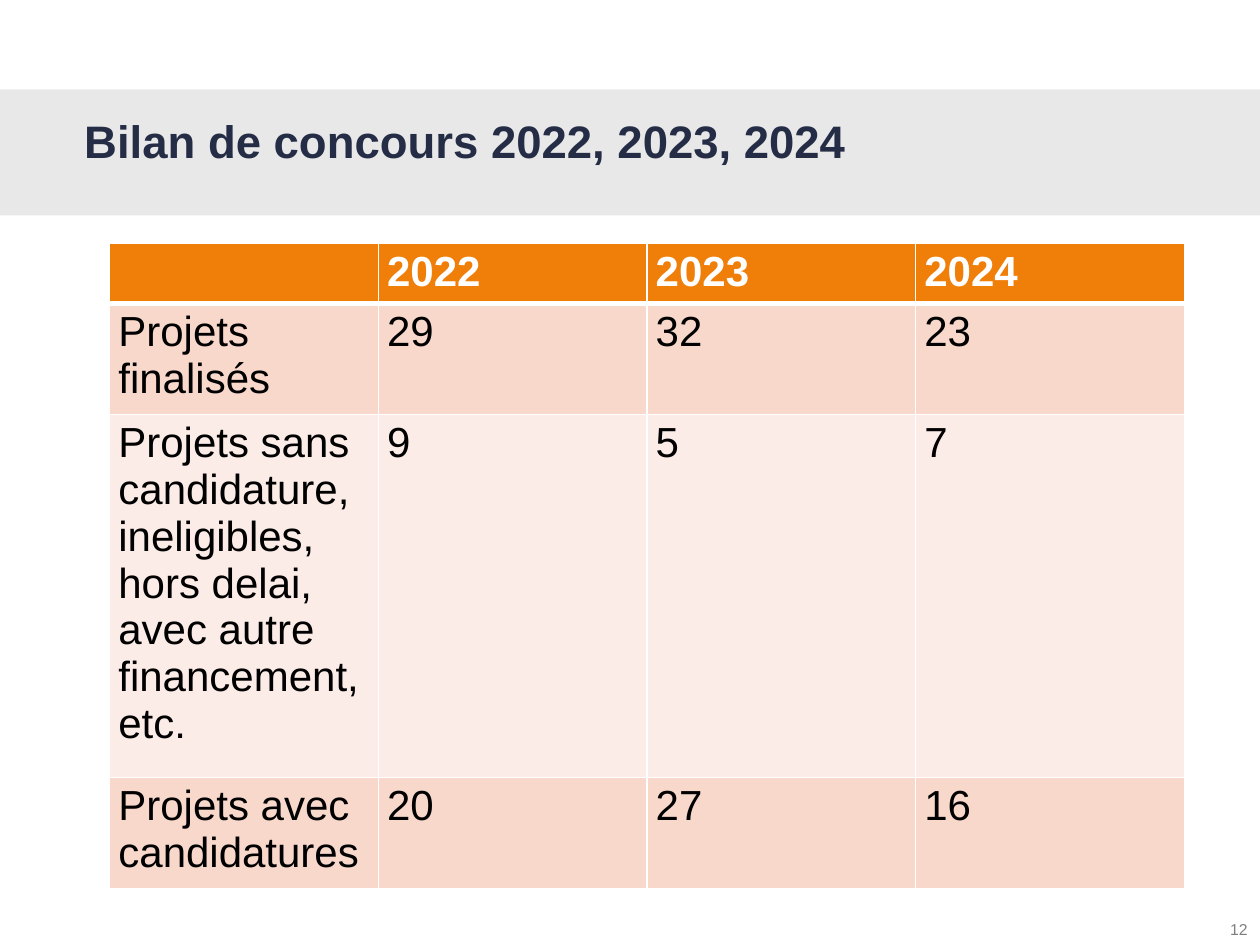
import pptx
import pptx.dml.color
import pptx.enum.shapes
import pptx.enum.text
import pptx.oxml
import pptx.oxml.ns
import pptx.util

RGBColor = pptx.dml.color.RGBColor
NAVY = RGBColor(0x24, 0x2D, 0x45)
GREY = RGBColor(0x7F, 0x7F, 0x7F)
BAND_GREY = RGBColor(0xD9, 0xD9, 0xD9)
ORANGE = RGBColor(0xF0, 0x7F, 0x09)
PEACH = RGBColor(0xF9, 0xD8, 0xCC)
PALE_PEACH = RGBColor(0xFC, 0xEC, 0xE7)
WHITE = RGBColor(0xFF, 0xFF, 0xFF)
BLACK = RGBColor(0, 0, 0)

ROWS = [
    ["", "2022", "2023", "2024"],
    ["Projets finalisés", "29", "32", "23"],
    ["Projets sans candidature, ineligibles, hors delai, avec autre financement, etc.", "9", "5", "7"],
    ["Projets avec candidatures", "20", "27", "16"],
]
ROW_HEIGHTS = [4.7, 8.2, 26.8, 8.2]


def write(frame, text, size=24, color=BLACK, bold=False, align=None):
    para = frame.paragraphs[0]
    para.alignment = align
    para.font.size = pptx.util.Pt(size)
    span = para.add_run()
    span.text = text
    span.font.name = "Arial"
    span.font.size = pptx.util.Pt(size)
    span.font.bold = bold
    span.font.color.rgb = color


class SlideBuilder:
    """Draw styled elements on a page ruled in 100 columns by 75 rows."""

    def __init__(self, deck):
        self.unit = deck.slide_width / 100
        self.page = deck.slides.add_slide(deck.slide_layouts[6])

    def units(self, *lengths):
        return [pptx.util.Emu(round(length * self.unit)) for length in lengths]

    def band(self, *place, color, opacity):
        box = self.page.shapes.add_shape(
            pptx.enum.shapes.MSO_SHAPE.RECTANGLE, *self.units(*place))
        box.shadow.inherit = False
        box.line.fill.background()
        box.fill.solid()
        box.fill.fore_color.rgb = color
        tint = box.fill._xPr.find(".//" + pptx.oxml.ns.qn("a:srgbClr"))
        tint.append(pptx.oxml.parse_xml(
            f'<a:alpha {pptx.oxml.ns.nsdecls("a")} val="{opacity * 1000}"/>'))

    def text(self, *place, text, wrap=True, **style):
        box = self.page.shapes.add_textbox(*self.units(*place))
        box.text_frame.word_wrap = wrap
        write(box.text_frame, text, **style)

    def border(self, cell, side, width):
        cell._tc.get_or_add_tcPr().append(pptx.oxml.parse_xml(
            f'<a:ln{side} {pptx.oxml.ns.nsdecls("a")} w="{pptx.util.Pt(width)}">'
            f'<a:solidFill><a:srgbClr val="{WHITE}"/></a:solidFill></a:ln{side}>'))

    def table(self, left, top, width, rows, heights):
        table = self.page.shapes.add_table(
            len(rows), len(rows[0]), *self.units(left, top, width, sum(heights))).table
        for row, height in zip(table.rows, heights):
            row.height = self.units(height)[0]
        for r, values in enumerate(rows):
            header = r == 0
            fill = ORANGE if header else (PALE_PEACH, PEACH)[r % 2]
            for c, value in enumerate(values):
                cell = table.cell(r, c)
                cell.margin_left = cell.margin_right = self.units(0.7)[0]
                cell.margin_top = cell.margin_bottom = self.units(0.4)[0]
                for side in "LRTB":
                    thick = (header and side == "B") or (r == 1 and side == "T")
                    self.border(cell, side, 3 if thick else 1)
                cell.fill.solid()
                cell.fill.fore_color.rgb = fill
                write(cell.text_frame, value, bold=header, color=WHITE if header else BLACK)


def main():
    deck = pptx.Presentation()
    deck.slide_width = pptx.util.Inches(10)
    deck.slide_height = pptx.util.Inches(7.5)
    slide = SlideBuilder(deck)
    slide.band(0, 7.1, 100, 10, color=BAND_GREY, opacity=59)
    slide.text(96.4, 72.5, 3.6, 2.5, text="12", wrap=False, size=9, color=GREY,
               align=pptx.enum.text.PP_ALIGN.RIGHT)
    slide.text(5.7, 8.5, 91.2, 7.8, text="Bilan de concours 2022, 2023, 2024",
               size=26, color=NAVY, bold=True)
    slide.table(8.7, 19.3, 85.3, ROWS, ROW_HEIGHTS)
    deck.save("out.pptx")


if __name__ == "__main__":
    main()
